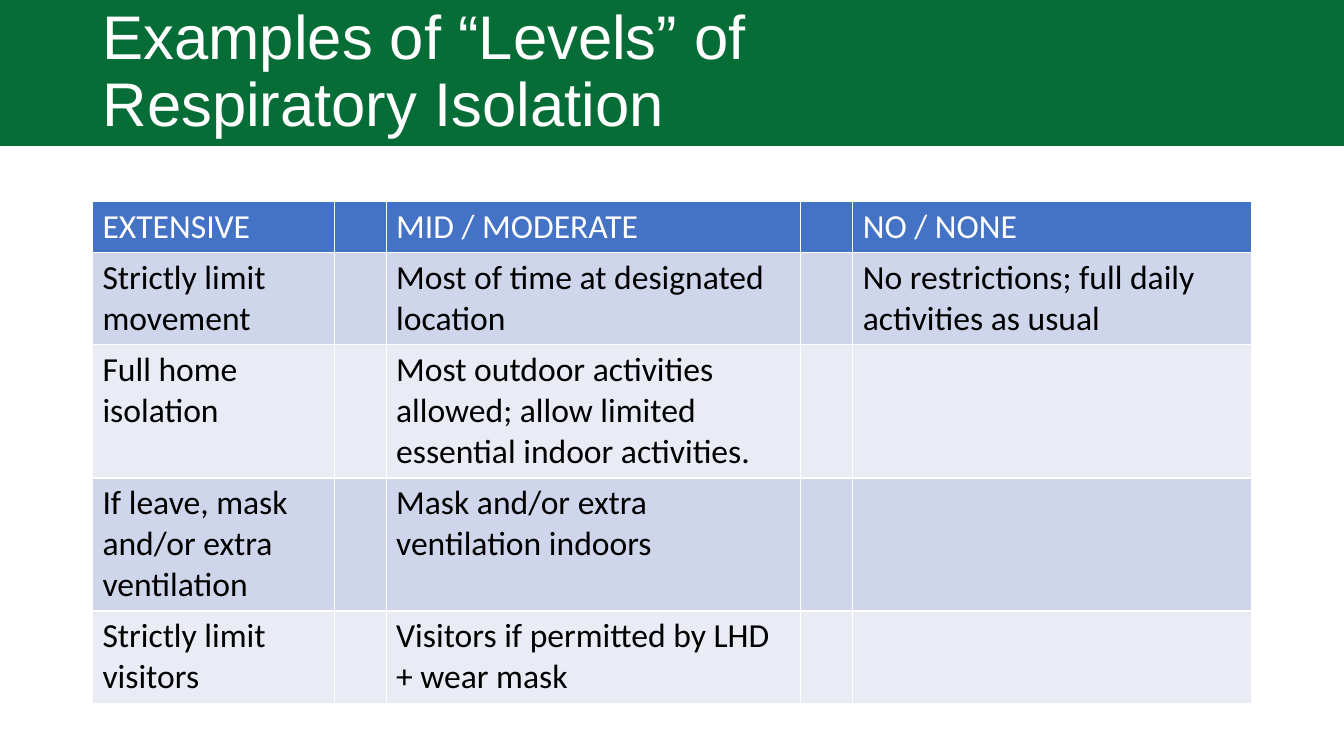
import pptx
import pptx.dml.color
import pptx.enum.shapes
import pptx.enum.text
import pptx.util

Cm = pptx.util.Cm
Pt = pptx.util.Pt

# Content
TITLE = "Examples of “Levels” of Respiratory Isolation"
LEVELS = [
    ("EXTENSIVE", "MID / MODERATE", "NO / NONE"),
    ("Strictly limit movement", "Most of time at designated location",
     "No restrictions; full daily activities as usual"),
    ("Full home isolation",
     "Most outdoor activities allowed; allow limited essential indoor activities.", ""),
    ("If leave, mask and/or extra ventilation", "Mask and/or extra ventilation indoors", ""),
    ("Strictly limit visitors", "Visitors if permitted by LHD + wear mask", ""),
]
COLUMN_WIDTHS = [6.1, 1.3, 10.44, 1.32, 10.06]
ROW_HEIGHTS = [1.27, 2.3, 3.33, 3.33, 2.3]
LEFT = 2.33
BAND_HEIGHT = 3.68
TABLE_TOP = 5.08

GREEN, BLUE, WHITE, BLACK = "076D37", "4472C4", "FFFFFF", "000000"
ROW_FILLS = ["E9EBF5", "CFD5EA"]
TITLE_FONT = {"name": "Arial", "size": Pt(44), "bold": False}
HEADER_FONT = {"name": "Calibri", "size": Pt(24), "bold": False}
BODY_FONT = {"name": "Calibri", "size": Pt(24)}


def color(hex_string):
    return pptx.dml.color.RGBColor.from_string(hex_string)


def set_fill(target, hex_string):
    target.fill.solid()
    target.fill.fore_color.rgb = color(hex_string)


def set_attributes(target, values):
    for name, value in values.items():
        setattr(target, name, value)


def set_font(font, values, hex_string):
    set_attributes(font, values)
    font.color.rgb = color(hex_string)


presentation = pptx.Presentation()
presentation.slide_width = Cm(33.87)
presentation.slide_height = Cm(19.05)
slide = presentation.slides.add_slide(presentation.slide_layouts[5])

# Green band, behind the title
band = slide.shapes.add_shape(
    pptx.enum.shapes.MSO_SHAPE.RECTANGLE, 0, 0, presentation.slide_width, Cm(BAND_HEIGHT))
set_fill(band, GREEN)
band.line.fill.background()
band.shadow.inherit = False
slide.shapes.title.element.addprevious(band.element)

# Title
title = slide.shapes.title
set_attributes(title, {"left": Cm(LEFT), "top": 0,
                       "width": Cm(25.1), "height": Cm(BAND_HEIGHT)})
title.text_frame.text = TITLE
set_attributes(title.text_frame, {
    "word_wrap": True,
    "auto_size": pptx.enum.text.MSO_AUTO_SIZE.NONE,
    "vertical_anchor": pptx.enum.text.MSO_ANCHOR.MIDDLE,
    "margin_right": Cm(0.8),
})
paragraph = title.text_frame.paragraphs[0]
set_attributes(paragraph, {"alignment": pptx.enum.text.PP_ALIGN.LEFT, "line_spacing": 0.9})
set_font(paragraph.runs[0].font, TITLE_FONT, WHITE)

# Table: text in every other column, narrow spacer columns between
table = slide.shapes.add_table(
    len(ROW_HEIGHTS), len(COLUMN_WIDTHS), Cm(LEFT), Cm(TABLE_TOP),
    Cm(sum(COLUMN_WIDTHS)), Cm(sum(ROW_HEIGHTS))).table
for column, width in zip(table.columns, COLUMN_WIDTHS):
    column.width = Cm(width)

for row_index, (row, height) in enumerate(zip(table.rows, ROW_HEIGHTS)):
    row.height = Cm(height)
    is_header = row_index == 0
    for column_index, cell in enumerate(row.cells):
        set_fill(cell, BLUE if is_header else ROW_FILLS[row_index % 2])
        level, is_spacer = divmod(column_index, 2)
        text = "" if is_spacer else LEVELS[row_index][level]
        if text:
            cell.text = text
            set_font(cell.text_frame.paragraphs[0].runs[0].font,
                     HEADER_FONT if is_header else BODY_FONT,
                     WHITE if is_header else BLACK)

presentation.save("out.pptx")
